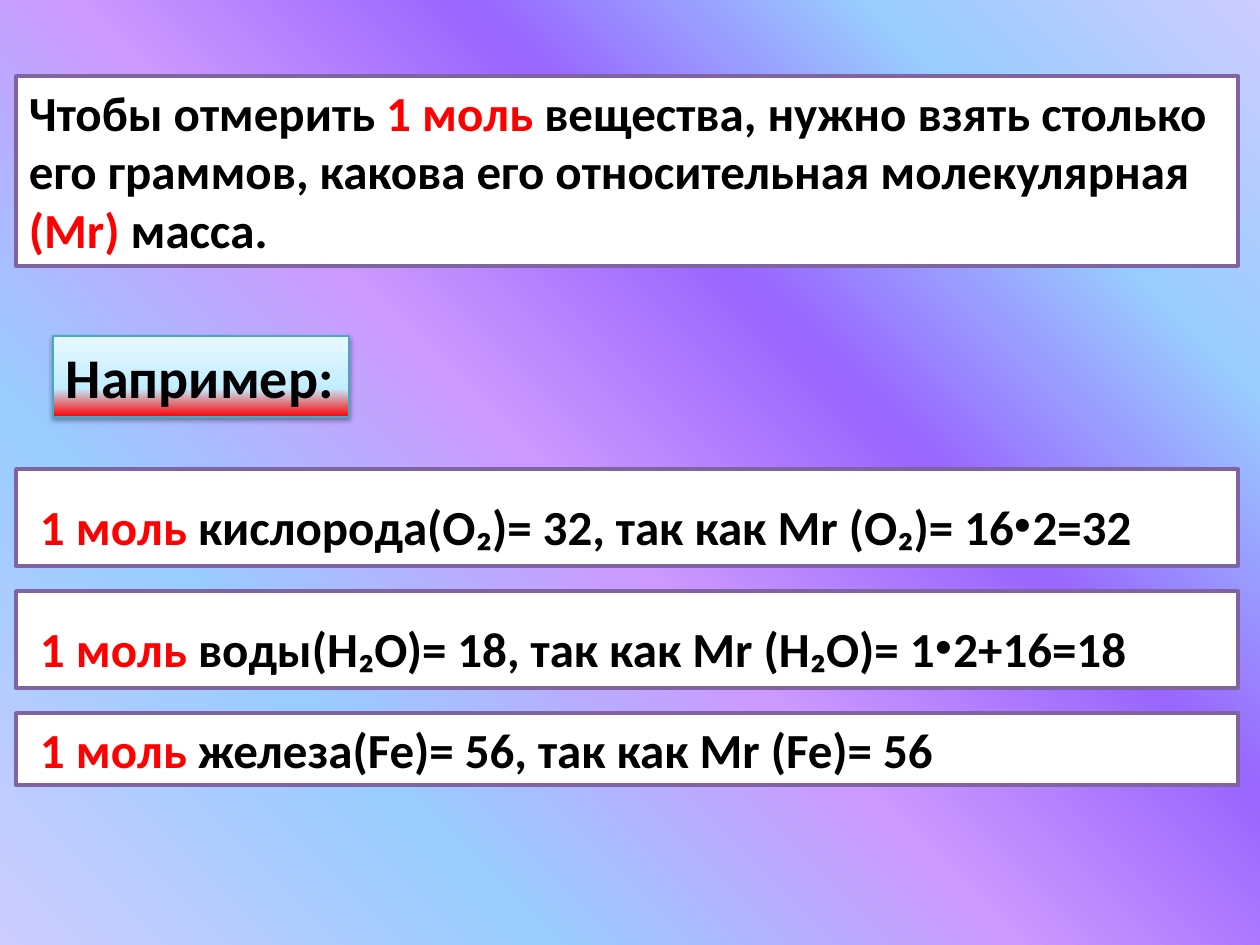
"""Builds the slide that explains how to measure out one mole of a substance."""
from lxml.etree import SubElement
from pptx import Presentation
from pptx.dml.color import RGBColor as RGB
from pptx.enum.shapes import MSO_SHAPE as SHAPE
from pptx.enum.text import MSO_ANCHOR as ANCHOR, MSO_AUTO_SIZE as AUTO, PP_ALIGN as ALIGN
from pptx.oxml.ns import qn
from pptx.util import Emu, Pt

COLORS = {
    "text": "000000", "accent": "FF0000", "panel": "FFFFFF", "border": "8064A2",
    "label_border": "46AAC5", "ice": "C1EDFF", "frost": "E7F8FF",
    "lavender": "CCCCFF", "sky": "99CCFF", "violet": "9966FF", "orchid": "CC99FF",
}


class Deck:
    EMU_PER_PX = 914400 / 126
    FONT = "Calibri"
    SIZE = 28

    def __init__(self, width, height):
        self.prs = Presentation()
        self.prs.slide_width, self.prs.slide_height = self.px(width), self.px(height)
        self.s = self.prs.slides.add_slide(self.prs.slide_layouts[6])

    def px(self, n):
        return Emu(round(n * self.EMU_PER_PX))

    def gradient(self, parent, stops):
        solid = parent.find(qn("a:solidFill"))
        grad = SubElement(parent, qn("a:gradFill"), rotWithShape="1")
        parent.replace(solid, grad)
        gs_lst = SubElement(grad, qn("a:gsLst"))
        for pos, name in stops:
            gs = SubElement(gs_lst, qn("a:gs"), pos=str(pos * 1000))
            SubElement(gs, qn("a:srgbClr"), val=COLORS[name])
        return grad

    def background(self, stops):
        self.s.background.fill.solid()
        grad = self.gradient(self.s.element.xpath(".//p:bgPr")[0], stops)
        circle = SubElement(grad, qn("a:path"), path="circle")
        SubElement(circle, qn("a:fillToRect"), l="100000", b="100000")

    def box(self, x, y, w, h, runs, border="border", line=2, indent=13, wrap=True):
        sp = self.s.shapes.add_shape(SHAPE.RECTANGLE, *map(self.px, (x, y, w, h)))
        sp.shadow.inherit = False
        sp.fill.solid()
        sp.fill.fore_color.rgb = RGB.from_string(COLORS["panel"])
        sp.line.color.rgb = RGB.from_string(COLORS[border])
        sp.line.width = Pt(line)
        tf = sp.text_frame
        tf.word_wrap = wrap
        tf.auto_size = AUTO.SHAPE_TO_FIT_TEXT
        tf.vertical_anchor = ANCHOR.TOP
        tf.margin_left = self.px(indent)
        p = tf.paragraphs[0]
        p.alignment = ALIGN.LEFT
        for text, color, size in runs:
            r = p.add_run()
            r.text = text
            r.font.name, r.font.size, r.font.bold = self.FONT, Pt(size), True
            r.font.color.rgb = RGB.from_string(COLORS[color])
        return sp

    def label(self, x, y, w, h, text, stops):
        sp = self.box(x, y, w, h, [(text, "text", 32)], "label_border", 0.75, wrap=False)
        sp_pr = sp.element.spPr
        grad = self.gradient(sp_pr, stops)
        SubElement(grad, qn("a:lin"), ang="16200000", scaled="1")
        shadow = SubElement(sp_pr.find(qn("a:effectLst")), qn("a:outerShdw"), blurRad="40000",
                            dist="20000", dir="5400000", rotWithShape="0")
        color = SubElement(shadow, qn("a:srgbClr"), val=COLORS["text"])
        SubElement(color, qn("a:alpha"), val="38000")

    def example(self, y, h, statement):
        before, dot, after = statement.partition("·")
        runs = [("1 моль ", "accent", self.SIZE), (before, "text", self.SIZE)]
        if dot:
            runs += [(dot, "text", 40), (after, "text", self.SIZE)]
        self.box(16, y, 1222, h, runs, indent=24)


def main():
    deck = Deck(1260, 945)
    deck.background([(0, "lavender"), (18, "sky"), (36, "violet"),
                     (54, "orchid"), (75, "sky"), (100, "lavender")])
    rule = [
        ("Чтобы отмерить ", "text"),
        ("1 моль ", "accent"),
        ("вещества, нужно взять столько его граммов, "
         "какова его относительная молекулярная ", "text"),
        ("(Mr) ", "accent"),
        ("масса.", "text"),
    ]
    deck.box(16, 76, 1222, 190, [(text, color, deck.SIZE) for text, color in rule])
    deck.label(53, 336, 296, 81, "Например:", [(0, "accent"), (35, "ice"), (100, "frost")])
    examples = [
        (97, "кислорода(О₂)= 32, так как Mr (О₂)= 16·2=32"),
        (97, "воды(Н₂О)= 18, так как Mr (Н₂О)= 1·2+16=18"),
        (72, "железа(Fe)= 56, так как Mr (Fe)= 56"),
    ]
    y, gap = 469, 25
    for h, statement in examples:
        deck.example(y, h, statement)
        y += h + gap
    deck.prs.save("out.pptx")


if __name__ == "__main__":
    main()
